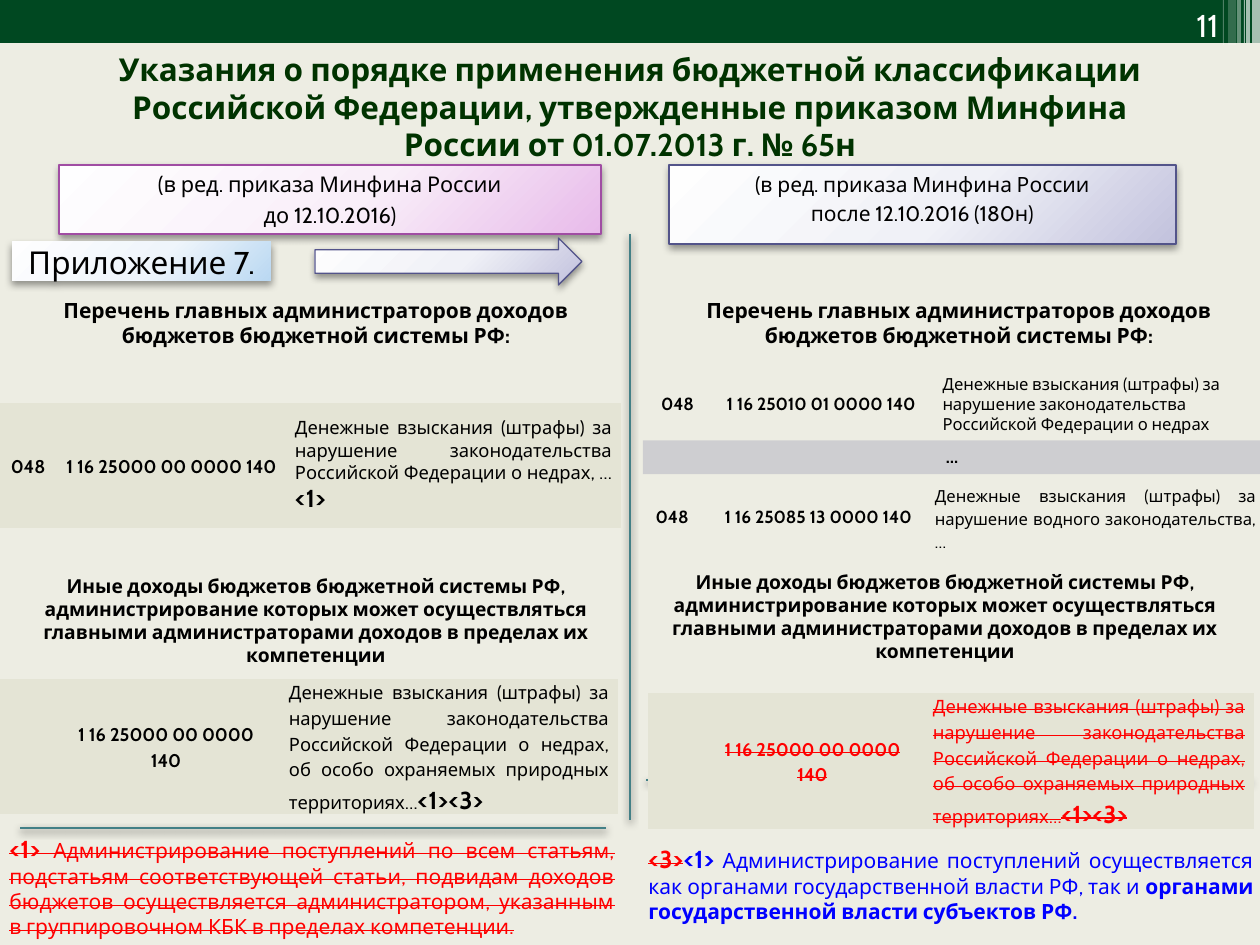
from lxml import etree
from pptx import Presentation
from pptx.dml.color import RGBColor
from pptx.enum.shapes import MSO_CONNECTOR, MSO_SHAPE
from pptx.enum.text import MSO_ANCHOR, PP_ALIGN
from pptx.oxml.ns import qn
from pptx.util import Pt

EMU_PER_PX = 914400 / 126
RECTANGLE, ARROW = MSO_SHAPE.RECTANGLE, MSO_SHAPE.RIGHT_ARROW
STRAIGHT = MSO_CONNECTOR.STRAIGHT
LEFT, CENTER, RIGHT, JUSTIFY = (PP_ALIGN.LEFT, PP_ALIGN.CENTER,
                                PP_ALIGN.RIGHT, PP_ALIGN.JUSTIFY)
TOP, MIDDLE, BOTTOM = MSO_ANCHOR.TOP, MSO_ANCHOR.MIDDLE, MSO_ANCHOR.BOTTOM

FONT = "Cabin"
NO_GRID_STYLE = "{2D5ABB26-0587-4C30-8999-92F81FD0307C}"
BLACK = RGBColor(0x00, 0x00, 0x00)
WHITE = RGBColor(0xFF, 0xFF, 0xFF)
RED = RGBColor(0xFF, 0x00, 0x00)
BLUE = RGBColor(0x00, 0x00, 0xFF)
BACKGROUND = RGBColor(0xED, 0xED, 0xE3)
HEADER_GREEN = RGBColor(0x00, 0x48, 0x21)
TITLE_GREEN = RGBColor(0x00, 0x33, 0x00)
BEIGE = RGBColor(0xE4, 0xE4, 0xD5)
INDIGO = RGBColor(0x53, 0x54, 0x8A)
PURPLE = RGBColor(0xA0, 0x4D, 0xA3)
TEAL = RGBColor(0x43, 0x80, 0x86)
PINK_GRADIENT = ("FEFEFF", "F9EFF9", "E8BBEA")
INDIGO_GRADIENT = ("FEFEFE", "F0F1F7", "C2C2DD")
BLUE_GRADIENT = ("FEFEFF", "EFF5FB", "BAD8F2")

ADMINISTRATORS = "Перечень главных администраторов доходов бюджетов бюджетной системы РФ:"
OTHER_INCOME = ("Иные доходы бюджетов бюджетной системы РФ, администрирование которых "
                "может осуществляться главными администраторами доходов в пределах их "
                "компетенции")
SUBSOIL = "Денежные взыскания (штрафы) за нарушение законодательства Российской Федерации о недрах"
PROTECTED = SUBSOIL + ", об особо охраняемых природных территориях…"
GROUP_CODE = "1 16 25000 00 0000 140"
NOTE = {"size": 14, "bold": True}


def px(value):
    return round(value * EMU_PER_PX)


def place(box):
    return [px(value) for value in box]


def add_xml(parent, tag, **attributes):
    return etree.SubElement(parent, qn(tag), attributes)


def set_alpha(properties, percent):
    color = next(properties.iter(qn("a:srgbClr")))
    add_xml(color, "a:alpha", val=str(percent * 1000))


def write(frame, paragraphs, align=LEFT, spacing=None, before=0, **base):
    """Each paragraph is a list of (text, format) spans."""
    for index, spans in enumerate(paragraphs):
        para = frame.paragraphs[0] if index == 0 else frame.add_paragraph()
        para.alignment = align
        if spacing:
            para.line_spacing = spacing
        if index and before:
            para.space_before = Pt(before)
        for text, changes in spans:
            style = {"name": FONT, "bold": False, "color": BLACK, **base, **changes}
            span = para.add_run()
            span.text = text
            span.font.color.rgb = style.pop("color")
            style["size"] = Pt(style["size"])
            if style.pop("strike", False):
                span._r.get_or_add_rPr().set("strike", "sngStrike")
            for name, value in style.items():
                setattr(span.font, name, value)


def add_text(page, box, paragraphs, anchor=TOP, **style):
    frame = page.shapes.add_textbox(*place(box)).text_frame
    frame.word_wrap = True
    frame.vertical_anchor = anchor
    write(frame, paragraphs, **style)


def add_bar(page, box, color, alpha=100):
    bar = page.shapes.add_shape(RECTANGLE, *place(box))
    bar.shadow.inherit = False
    bar.fill.solid()
    bar.fill.fore_color.rgb = color
    bar.line.fill.background()
    if alpha < 100:
        set_alpha(bar._element.spPr, alpha)


def add_shadow(properties):
    effects = properties.find(qn("a:effectLst"))
    if effects is None:
        effects = add_xml(properties, "a:effectLst")
    shadow = add_xml(effects, "a:outerShdw", blurRad=str(Pt(4.1)), dist=str(Pt(2)),
                     dir="5400000", rotWithShape="0")
    add_xml(add_xml(shadow, "a:srgbClr", val="000000"), "a:alpha", val="40000")


def add_gradient_shape(page, kind, box, colors, line=None, paragraphs=(), anchor=TOP, **style):
    shape = page.shapes.add_shape(kind, *place(box))
    properties = shape._element.spPr
    gradient = etree.Element(qn("a:gradFill"), rotWithShape="1")
    stops = add_xml(gradient, "a:gsLst")
    for position, color in zip((0, 55, 100), colors):
        stop = add_xml(stops, "a:gs", pos=str(position * 1000))
        add_xml(stop, "a:srgbClr", val=color)
    add_xml(add_xml(gradient, "a:path", path="circle"), "a:fillToRect",
            l="-40000", t="-90000", r="140000", b="190000")
    properties.find(qn("a:prstGeom")).addnext(gradient)
    if line:
        shape.line.color.rgb = line
        shape.line.width = Pt(0.75)
    else:
        shape.line.fill.background()
    shape.shadow.inherit = False
    add_shadow(properties)
    shape.text_frame.vertical_anchor = anchor
    write(shape.text_frame, paragraphs, align=CENTER, **style)


def add_line(page, start, end):
    line = page.shapes.add_connector(STRAIGHT, *place(start + end))
    line.line.color.rgb = TEAL
    line.line.width = Pt(1.5)
    add_shadow(line._element.spPr)


def add_plain_table(page, left, top, widths, heights):
    table = page.shapes.add_table(len(heights), len(widths), *place(
        (left, top, sum(widths), sum(heights)))).table
    table.first_row = table.horz_banding = False
    table._tbl.tblPr.find(qn("a:tableStyleId")).text = NO_GRID_STYLE
    for column, width in zip(table.columns, widths):
        column.width = px(width)
    for row, height in zip(table.rows, heights):
        row.height = px(height)
    return table


def fill_cell(cell, spans, fill=None, margins=None, **style):
    cell.vertical_anchor = MIDDLE
    if fill:
        cell.fill.solid()
        cell.fill.fore_color.rgb = fill
    else:
        cell.fill.background()
    if margins:
        across, down = place(margins)
        cell.margin_left = cell.margin_right = across
        cell.margin_top = cell.margin_bottom = down
    if spans:
        write(cell.text_frame, [spans], **style)


def add_code_row(page, left, top, widths, height, number, details, spacing=1.15, **style):
    """One beige row: administrator number, income code, description."""
    table = add_plain_table(page, left, top, widths, [height])
    common = {"fill": BEIGE, "margins": (9, 0), "size": 10.5, **style}
    for column, text in enumerate((number, GROUP_CODE)):
        fill_cell(table.cell(0, column), [(text, {})] if text else [],
                  align=CENTER, spacing=1.15, bold=True, **common)
    fill_cell(table.cell(0, 2), details, align=JUSTIFY, spacing=spacing, **common)


def add_detailed_codes(page):
    table = add_plain_table(page, 643, 368, (69, 218, 331), (55, 27, 65))
    table.cell(1, 0).merge(table.cell(1, 2))
    bold = {"size": 10, "bold": True}
    rows = ((0, "1 16 25010 01 0000 140", CENTER), (2, "1 16 25085 13 0000 140", LEFT))
    for row, code, align in rows:
        fill_cell(table.cell(row, 0), [("048", {})], align=align, **bold)
        fill_cell(table.cell(row, 1), [(code, {})], align=align, **bold)
    fill_cell(table.cell(0, 2), [(SUBSOIL, {})], size=9.5)
    fill_cell(table.cell(1, 0), [("…", {})], fill=INDIGO, align=CENTER, **bold)
    set_alpha(table.cell(1, 0)._tc.tcPr, 20)
    water = "Денежные взыскания (штрафы) за нарушение водного законодательства, …"
    fill_cell(table.cell(2, 2), [(water, {})], margins=(5, 9), align=JUSTIFY,
              spacing=1.15, size=9.5)


def add_header(page):
    add_bar(page, (0, 0, 1260, 43), HEADER_GREEN)
    for left, width, height, alpha in ((1252, 8, 43, 65), (1246, 4, 43, 65), (1244, 1, 43, 60),
                                       (1237, 4, 43, 40), (1228, 8, 45, 20), (1223, 1, 45, 30)):
        add_bar(page, (left, 0, width, height), WHITE, alpha)
    add_text(page, (1126, 0, 105, 50), [[("11", {})]], anchor=BOTTOM, align=RIGHT,
             size=18, color=WHITE)
    title = page.shapes.title
    title.left, title.top, title.width, title.height = place((63, 48, 1134, 117))
    title.text_frame.vertical_anchor = MIDDLE
    heading = ("Указания о порядке применения бюджетной классификации Российской Федерации, "
               "утвержденные приказом Минфина России от 01.07.2013 г. № 65н")
    write(title.text_frame, [[(heading, {})]], align=CENTER, size=18, bold=True,
          color=TITLE_GREEN)


def main():
    deck = Presentation()
    deck.slide_width, deck.slide_height = px(1260), px(945)
    page = deck.slides.add_slide(deck.slide_layouts[5])
    page.background.fill.solid()
    page.background.fill.fore_color.rgb = BACKGROUND
    add_header(page)

    # Edition boxes, appendix label and arrow
    edition = "(в ред. приказа Минфина России"
    add_gradient_shape(page, RECTANGLE, (59, 165, 542, 69), PINK_GRADIENT, PURPLE,
                       [[(edition, {})], [("до 12.10.2016)", {})]], size=12.4, before=2.5)
    add_gradient_shape(page, RECTANGLE, (669, 165, 507, 79), INDIGO_GRADIENT, INDIGO,
                       [[(edition, {})], [("после 12.10.2016 (180н)", {})]], size=12, before=2.5)
    add_gradient_shape(page, RECTANGLE, (12, 242, 259, 39), BLUE_GRADIENT,
                       paragraphs=[[("Приложение 7.", {})]], anchor=MIDDLE, size=18)
    add_gradient_shape(page, ARROW, (315, 238, 267, 47), INDIGO_GRADIENT, INDIGO)

    # Dividers
    for start, end in (((630, 234), (630, 820)), ((1252, 780), (646, 780)),
                       ((606, 828), (20, 828))):
        add_line(page, start, end)

    # Section headings of both columns
    for box, text, size in (((3, 291, 626, 63), ADMINISTRATORS, 12),
                            ((646, 291, 626, 63), ADMINISTRATORS, 12),
                            ((3, 568, 626, 106), OTHER_INCOME, 11),
                            ((630, 564, 630, 106), OTHER_INCOME, 11)):
        add_text(page, box, [[(text, {})]], align=CENTER, size=size, bold=True)

    # Tables of income codes
    add_code_row(page, -1, 403, (58, 229, 335), 125, "048",
                 [(SUBSOIL + ", …", {}), ("<1>", NOTE)], spacing=None)
    add_detailed_codes(page)
    protected = [(PROTECTED, {}), ("<1><3>", NOTE)]
    add_code_row(page, -2, 679, (54, 228, 338), 130, "", protected)
    add_code_row(page, 648, 693, (53, 223, 330), 136, "", protected, color=RED, strike=True)

    # Footnotes
    add_text(page, (-3, 828, 630, 118), [[
        ("<1> ", NOTE),
        ("Администрирование поступлений по всем статьям, подстатьям соответствующей статьи, "
         "подвидам доходов бюджетов осуществляется администратором, указанным в группировочном "
         "КБК в пределах компетенции.", {})]], align=JUSTIFY, size=12, color=RED, strike=True)
    add_text(page, (636, 838, 630, 93), [[
        ("<3>", {**NOTE, "color": RED, "strike": True}), ("<1>", NOTE),
        (" Администрирование поступлений осуществляется как органами государственной власти "
         "РФ, так и ", {}),
        ("органами государственной власти субъектов РФ.", {"bold": True})]],
        align=JUSTIFY, size=12, color=BLUE)
    deck.save("out.pptx")


if __name__ == "__main__":
    main()
